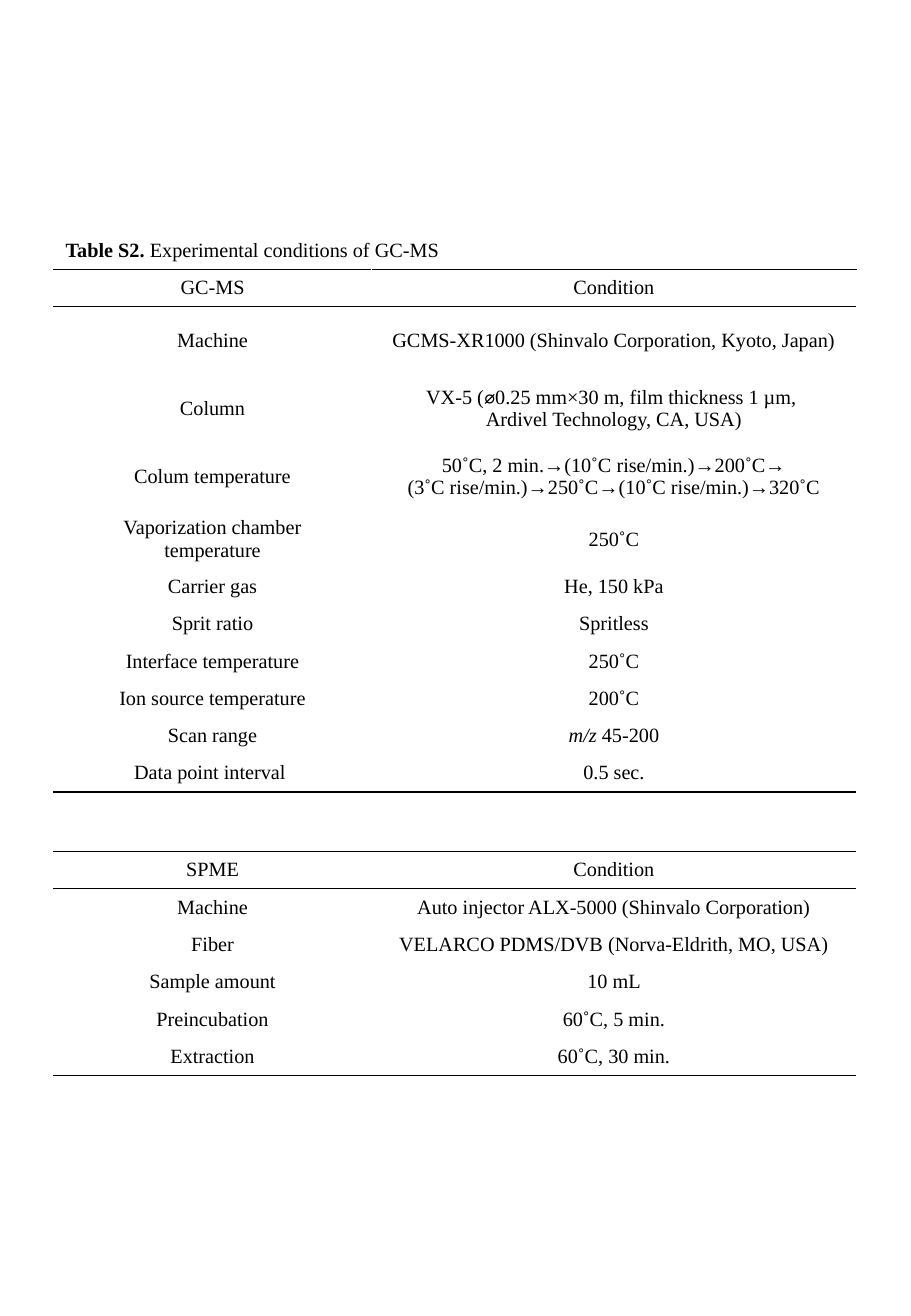
from dataclasses import dataclass

from lxml.etree import SubElement
from pptx import Presentation
from pptx.dml.color import RGBColor
from pptx.enum.text import MSO_ANCHOR, PP_ALIGN
from pptx.oxml.ns import qn
from pptx.table import Table, _Cell
from pptx.util import Inches, Pt


@dataclass(frozen=True)
class Theme:
    font: str = "Times New Roman"
    size: int = 12
    ink: str = "000000"
    paper: str = "FFFFFF"
    line_width: int = 1


@dataclass(frozen=True)
class Span:
    text: str
    bold: bool = False
    italic: bool = False


@dataclass(frozen=True)
class Row:
    label: str
    condition: str | tuple[Span, ...]
    height: float | None = None
    ruled: bool = False  # black rule below the row


THEME = Theme()
NO_GRID_STYLE = "{2D5ABB26-0587-4C30-8999-92F81FD0307C}"
TABLE_LEFT, TABLE_TOP, TABLE_HEIGHT = 0.44, 1.91, 6.94
COLUMN_WIDTHS = (2.62, 3.99)
TALL, TWO_LINES, GAP = 0.56, 0.47, 0.49

TITLE = (Span("Table S2. ", bold=True), Span("Experimental conditions of GC-MS"))
ROWS = (
    Row("", TITLE, ruled=True),
    # Gas chromatography
    Row("GC-MS", "Condition", ruled=True),
    Row("Machine", "GCMS-XR1000 (Shinvalo Corporation, Kyoto, Japan)", TALL),
    Row("Column", "VX-5 (⌀0.25 mm×30 m, film thickness 1 µm, \n"
        "Ardivel Technology, CA, USA)", TALL),
    Row("Colum temperature", "50˚C, 2 min.→(10˚C rise/min.)→200˚C→\n"
        "(3˚C rise/min.)→250˚C→(10˚C rise/min.)→320˚C", TALL),
    Row("Vaporization chamber\ntemperature", "250˚C", TWO_LINES),
    Row("Carrier gas", "He, 150 kPa"),
    Row("Sprit ratio", "Spritless"),
    Row("Interface temperature", "250˚C"),
    Row("Ion source temperature", "200˚C"),
    Row("Scan range", (Span("m/z", italic=True), Span(" 45-200"))),
    Row("Data point interval ", "0.5 sec.", ruled=True),
    Row("", "", GAP, ruled=True),
    # Microextraction
    Row("SPME", "Condition", ruled=True),
    Row("Machine", "Auto injector ALX-5000 (Shinvalo Corporation)"),
    Row("Fiber", "VELARCO PDMS/DVB (Norva-Eldrith, MO, USA)"),
    Row("Sample amount", "10 mL"),
    Row("Preincubation", "60˚C, 5 min."),
    Row("Extraction", "60˚C, 30 min.", ruled=True),
)


def write_cell(cell: _Cell, content: str | tuple[Span, ...],
               align: PP_ALIGN = PP_ALIGN.CENTER) -> None:
    """Fill a cell with one paragraph per line of content."""
    cell.vertical_anchor = MSO_ANCHOR.MIDDLE
    if not content:
        return
    lines = ([(Span(line),) for line in content.split("\n")]
             if isinstance(content, str) else [content])
    for index, spans in enumerate(lines):
        frame = cell.text_frame
        para = frame.add_paragraph() if index else frame.paragraphs[0]
        para.alignment = align
        for span in spans:
            run = para.add_run()
            run.text = span.text
            run.font.name = THEME.font
            run.font.size = Pt(THEME.size)
            run.font.bold = span.bold
            run.font.italic = span.italic
            run.font.color.rgb = RGBColor.from_string(THEME.ink)


def set_borders(cell: _Cell, borders: dict[str, str]) -> None:
    """Draw the given sides (in L, R, T, B order) ahead of the cell fill."""
    properties = cell._tc.get_or_add_tcPr()
    for position, (side, color) in enumerate(borders.items()):
        line = SubElement(properties, qn(f"a:ln{side}"), w=str(Pt(THEME.line_width)))
        fill = SubElement(line, qn("a:solidFill"))
        SubElement(fill, qn("a:srgbClr"), val=color)
        properties.insert(position, line)


def rule_color(ruled: bool) -> str:
    return THEME.ink if ruled else THEME.paper


def fill_table(table: Table) -> None:
    """Write all rows and rule them."""
    fixed = [row.height for row in ROWS if row.height]
    standard = (TABLE_HEIGHT - sum(fixed)) / (len(ROWS) - len(fixed))
    for column, width in zip(table.columns, COLUMN_WIDTHS):
        column.width = Inches(width)
    table.cell(0, 0).merge(table.cell(0, 1))

    for index, row in enumerate(ROWS):
        table.rows[index].height = Inches(row.height or standard)
        label, condition = table.cell(index, 0), table.cell(index, 1)
        if index == 0:
            write_cell(label, row.condition, PP_ALIGN.LEFT)
        else:
            write_cell(label, row.label)
            write_cell(condition, row.condition)
        above = rule_color(index > 0 and ROWS[index - 1].ruled)
        below = rule_color(row.ruled)
        for cell, inner_side in ((label, "R"), (condition, "L")):
            cell.fill.background()
            set_borders(cell, {inner_side: THEME.paper, "T": above, "B": below})


def main() -> None:
    deck = Presentation()
    deck.slide_width, deck.slide_height = Inches(7.5), Inches(10.83)
    page = deck.slides.add_slide(deck.slide_layouts[6])

    # Conditions table without the default banded style
    frame = page.shapes.add_table(
        len(ROWS), len(COLUMN_WIDTHS), Inches(TABLE_LEFT), Inches(TABLE_TOP),
        Inches(sum(COLUMN_WIDTHS)), Inches(TABLE_HEIGHT))
    table = frame.table
    table.first_row = table.horz_banding = False
    table._tbl.tblPr.find(qn("a:tableStyleId")).text = NO_GRID_STYLE
    fill_table(table)

    deck.save("out.pptx")


if __name__ == "__main__":
    main()
